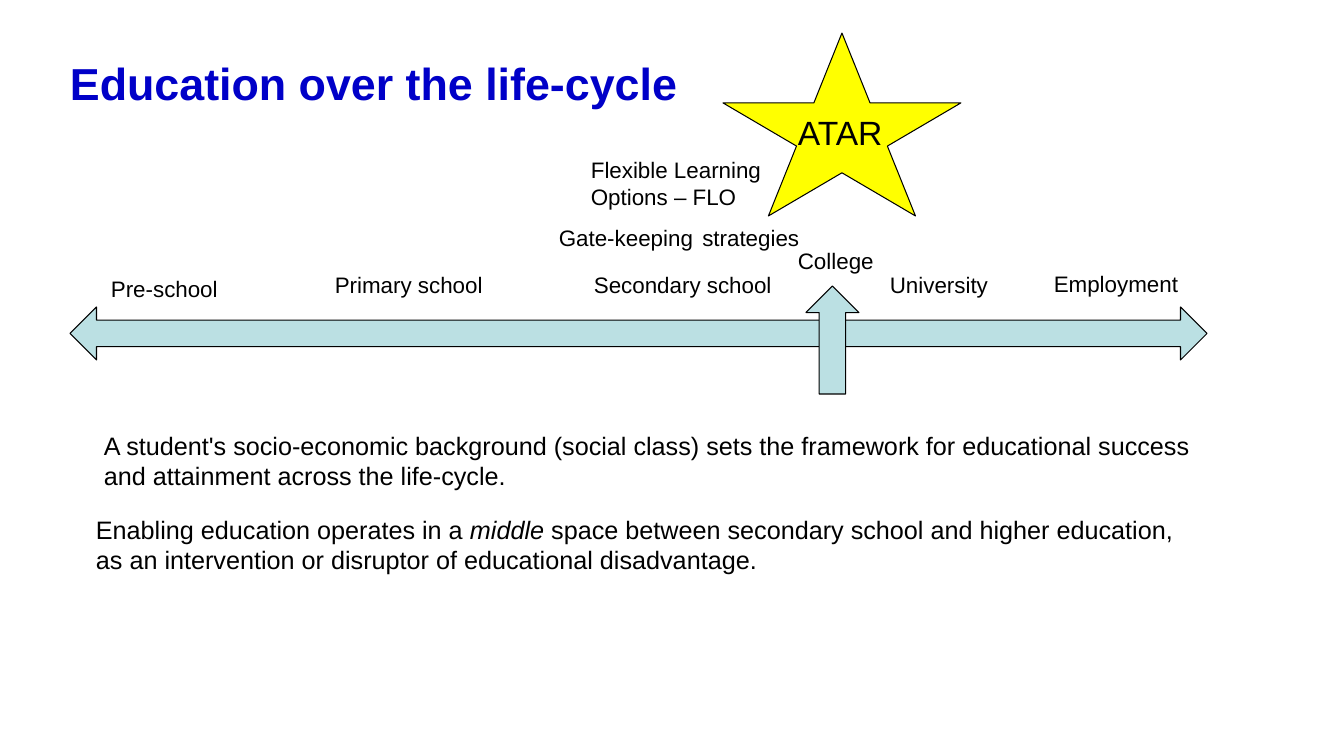
"""Build the slide on education over the life-cycle."""
from pptx import Presentation
from pptx.dml.color import RGBColor
from pptx.enum.shapes import MSO_SHAPE
from pptx.enum.text import MSO_ANCHOR
from pptx.util import Inches, Pt

PX = Inches(1) / 100.8
COLOURS = {"title": "0000C8", "text": "000000", "star": "FFFF00", "arrow": "BBE0E3"}


def scaled(*lengths):
    return [round(length * PX) for length in lengths]


def add_text(place, spans, colour="text"):
    box = page.shapes.add_textbox(*scaled(*place))
    box.text_frame.word_wrap = True
    para = box.text_frame.paragraphs[0]
    for text, size, style in spans:
        span = para.add_run()
        span.text = text
        span.font.color.rgb = RGBColor.from_string(COLOURS[colour])
        for name, value in {"name": "Arial", "size": Pt(size), **style}.items():
            setattr(span.font, name, value)
    return box


deck = Presentation()
deck.slide_width, deck.slide_height = scaled(1344, 756)
page = deck.slides.add_slide(deck.slide_layouts[6])

shapes = [
    (MSO_SHAPE.STAR_5_POINT, (723, 33, 238, 183), "star"),
    (MSO_SHAPE.LEFT_RIGHT_ARROW, (70, 307, 1137, 53), "arrow"),
    (MSO_SHAPE.UP_ARROW, (806, 286, 53, 108), "arrow"),
]
for kind, place, colour in shapes:
    shape = page.shapes.add_shape(kind, *scaled(*place))
    shape.shadow.inherit = False
    shape.fill.solid()
    shape.fill.fore_color.rgb = RGBColor.from_string(COLOURS[colour])
    shape.line.color.rgb = RGBColor.from_string(COLOURS["text"])
    shape.line.width = Pt(0.75)

title = add_text((60, 47, 1214, 72), [("Education over the life-cycle", 32, {"bold": True})], "title")
title.text_frame.vertical_anchor = MSO_ANCHOR.MIDDLE

wide_space = (" ", 24, {})
labels = [
    ((101, 259, 143, 50), [("Pre-school", 16, {}), wide_space]),
    ((325, 266, 182, 37), [("Primary school", 16, {})]),
    ((584, 266, 311, 37), [("Secondary school", 16, {})]),
    ((880, 266, 182, 37), [("University", 16, {})]),
    ((1044, 254, 210, 50), [("Employment", 16, {}), wide_space]),
    ((788, 231, 143, 50), [("College", 16, {}), wide_space]),
    ((549, 208, 299, 50),
     [("Gate-keeping", 16, {}), wide_space, ("strategies", 16, {}), wide_space]),
    ((581, 151, 236, 65), [("Flexible Learning Options – FLO", 16, {})]),
    ((788, 107, 143, 50), [("ATAR", 24, {})]),
    ((94, 425, 1122, 72),
     [("A student's socio-economic background (social class) sets the framework for "
       "educational success and attainment across the life-cycle.", 18, {})]),
    ((86, 509, 1104, 72),
     [("Enabling education operates in a ", 18, {}),
      ("middle", 18, {"italic": True}),
      (" space between secondary school and higher education, as an intervention or "
       "disruptor of educational disadvantage.", 18, {})]),
]
for place, spans in labels:
    add_text(place, spans)

deck.save("out.pptx")
